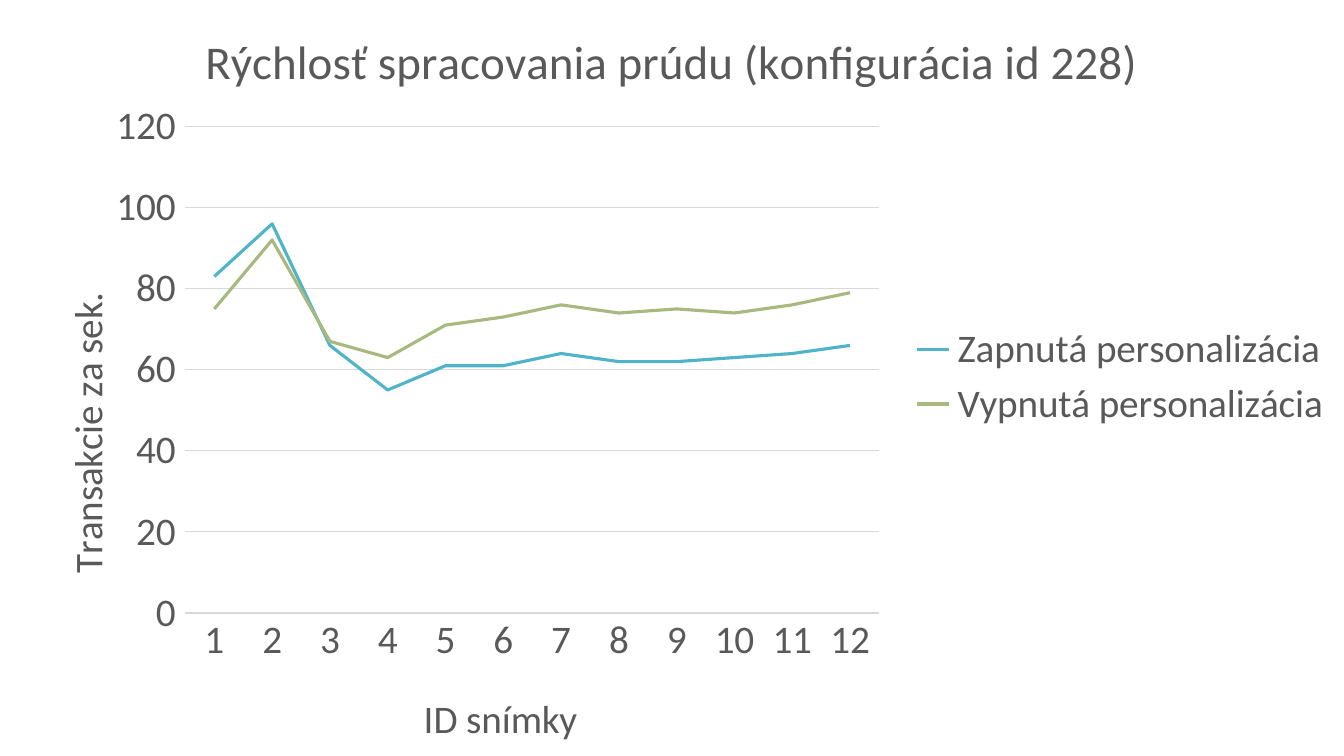
from lxml import etree
from pptx import Presentation
from pptx.chart.data import CategoryChartData
from pptx.dml.color import RGBColor
from pptx.enum import chart as ch
from pptx.oxml.ns import qn
from pptx.util import Inches, Pt

TITLE = "Rýchlosť spracovania prúdu (konfigurácia id 228)"
X_TITLE, Y_TITLE = "ID snímky", "Transakcie za sek."
SERIES = [
    ("Zapnutá personalizácia", "zapnuta",
     (83, 96, 66, 55, 61, 61, 64, 62, 62, 63, 64, 66)),
    ("Vypnutá personalizácia", "vypnuta",
     (75, 92, 67, 63, 71, 73, 76, 74, 75, 74, 76, 79)),
]
COLORS = {"text": "595959", "grid": "D9D9D9",
          "zapnuta": "50B4C8", "vypnuta": "A8B97F"}
FONT, SIZE, TITLE_SIZE = "Calibri", 28, 33.6
# Fractions of the chart area
LAYOUTS = {
    "plot": {"layoutTarget": "inner", "x": 0.138, "y": 0.168, "w": 0.516, "h": 0.646},
    "x_title": {"x": 0.31, "y": 0.91},
    "y_title": {"x": 0.04, "y": 0.38},
}


def color(key):
    return RGBColor.from_string(COLORS[key])


def style_font(font, size=SIZE):
    for name, value in {"name": FONT, "size": Pt(size), "bold": False}.items():
        setattr(font, name, value)
    font.color.rgb = color("text")


def style_line(line, key, width):
    line.color.rgb = color(key)
    line.width = Pt(width)


def set_title(owner, label, size=SIZE):
    tf = (owner.chart_title if hasattr(owner, "chart_title") else owner.axis_title).text_frame
    tf.text = label
    style_font(tf.paragraphs[0].runs[0].font, size)


def place(element, values):
    """Give a chart part a manual layout."""
    for old in element.findall(qn("c:layout")):
        element.remove(old)
    layout = etree.Element(qn("c:layout"))
    manual = etree.SubElement(layout, qn("c:manualLayout"))
    modes = {f"{k}Mode": "edge" for k in "xy"}
    target = {k: v for k, v in values.items() if k == "layoutTarget"}
    for tag, value in {**target, **modes, **values}.items():
        etree.SubElement(manual, qn(f"c:{tag}")).set("val", str(value))
    overlay = element.find(qn("c:overlay"))
    if overlay is None:
        element.insert(0, layout)
    else:
        overlay.addprevious(layout)


prs = Presentation()
prs.slide_width, prs.slide_height = Inches(13.33), Inches(7.5)
slide = prs.slides.add_slide(prs.slide_layouts[6])

data = CategoryChartData()
data.categories = [str(i + 1) for i in range(len(SERIES[0][2]))]
for name, _, values in SERIES:
    data.add_series(name, values)
chart = slide.shapes.add_chart(ch.XL_CHART_TYPE.LINE, 0, 0, prs.slide_width,
                               prs.slide_height, data).chart
style_font(chart.font)
set_title(chart, TITLE, TITLE_SIZE)

plot = chart.plots[0]
plot.vary_by_categories = False
for series, (_, key, _) in zip(plot.series, SERIES):
    series.smooth = False
    series.marker.style = ch.XL_MARKER_STYLE.NONE
    style_line(series.format.line, key, 2.25)

x_axis, y_axis = chart.category_axis, chart.value_axis
for axis, label, key in ((x_axis, X_TITLE, "x_title"), (y_axis, Y_TITLE, "y_title")):
    set_title(axis, label)
    style_font(axis.tick_labels.font)
    axis.major_tick_mark = ch.XL_TICK_MARK.NONE
    place(axis.axis_title._element, LAYOUTS[key])
style_line(x_axis.format.line, "grid", 0.75)
for name, value in {"minimum_scale": 0, "maximum_scale": 120, "major_unit": 20,
                    "major_tick_mark": ch.XL_TICK_MARK.OUTSIDE}.items():
    setattr(y_axis, name, value)
y_axis.format.line.fill.background()
style_line(y_axis.major_gridlines.format.line, "grid", 0.75)
y_axis.axis_title.text_frame._txBody.bodyPr.set("rot", "-5400000")
y_axis.axis_title.text_frame._txBody.bodyPr.set("vert", "horz")

chart.has_legend = True
chart.legend.position = ch.XL_LEGEND_POSITION.RIGHT
chart.legend.include_in_layout = False
style_font(chart.legend.font)
place(chart._chartSpace.chart.plotArea, LAYOUTS["plot"])

prs.save("out.pptx")
